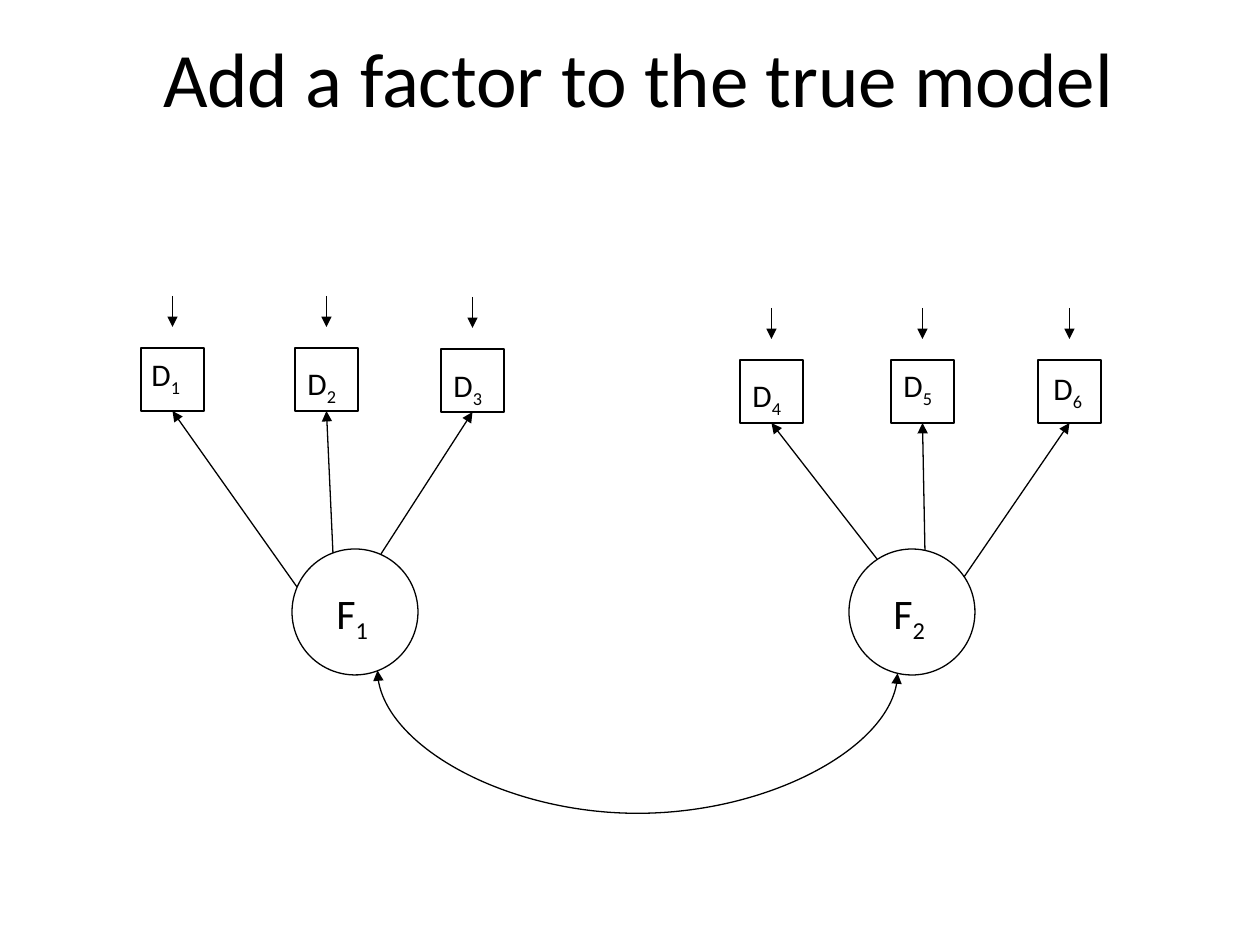
from lxml.etree import SubElement
from pptx import Presentation
from pptx.dml.color import RGBColor
from pptx.enum.shapes import MSO_CONNECTOR, MSO_SHAPE
from pptx.enum.text import MSO_ANCHOR, MSO_AUTO_SIZE, PP_ALIGN
from pptx.oxml.ns import qn
from pptx.util import Emu, Pt

PX = 914400 / 126
COLORS = {"ink": "000000"}
INK = RGBColor.from_string(COLORS["ink"])
BOX, CIRCLE = 63, 126

prs = Presentation()
prs.slide_width, prs.slide_height = Emu(round(1260 * PX)), Emu(round(945 * PX))
slide = prs.slides.add_slide(prs.slide_layouts[6])
shapes = slide.shapes


def add_text(text, x, y, w, h, size, sub="", wrap=False, align=PP_ALIGN.LEFT,
             anchor=MSO_ANCHOR.TOP):
    """Add a text box, with an optional subscript after the text."""
    tf = shapes.add_textbox(*[Emu(round(v * PX)) for v in (x, y, w, h)]).text_frame
    tf.word_wrap = wrap
    tf.auto_size = MSO_AUTO_SIZE.NONE if wrap else MSO_AUTO_SIZE.SHAPE_TO_FIT_TEXT
    tf.vertical_anchor = anchor
    p = tf.paragraphs[0]
    p.alignment = align
    for part in filter(None, (text, sub)):
        r = p.add_run()
        r.text = part
        r.font.name, r.font.size = "Calibri", Pt(size)
        r.font.color.rgb = INK
    if sub:
        r.font._element.set("baseline", "-25000")


def add_arrow(x1, y1, x2, y2, kind=MSO_CONNECTOR.STRAIGHT, ends=("tailEnd",)):
    cxn = shapes.add_connector(kind, *[Emu(round(v * PX)) for v in (x1, y1, x2, y2)])
    cxn.line.color.rgb = INK
    cxn.line.width = Pt(0.75)
    ln = cxn.line._get_or_add_ln()
    for end in ends:
        SubElement(ln, qn(f"a:{end}"), type="triangle")
    SubElement(cxn._element.spPr, qn("a:effectLst"))
    return cxn


# Indicators: box x, y; label x, y; start of the loading arrow on its factor
indicators = [
    (141, 348, 139, 349, 297, 587),
    (295, 348, 295, 358, 333, 553),
    (441, 349, 441, 360, 381, 554),
    (740, 360, 740, 370, 877, 559),
    (891, 360, 891, 360, 925, 551),
    (1038, 360, 1041, 363, 964, 577),
]
# Factors: circle x, rotation
factors = [(292, 23.7), (849, 326.9)]
FACTOR_Y = 549

outlines = [(MSO_SHAPE.OVAL, x, FACTOR_Y, CIRCLE, turn) for x, turn in factors]
outlines += [(MSO_SHAPE.RECTANGLE, x, y, BOX, 0) for x, y, *_ in indicators]
for kind, x, y, side, turn in outlines:
    sp = shapes.add_shape(kind, *[Emu(round(v * PX)) for v in (x, y, side, side)])
    sp.rotation = turn
    sp.shadow.inherit = False
    sp.fill.background()
    sp.line.color.rgb = INK
    sp.line.width = Pt(0.75)

for i, (x, y, label_x, label_y, from_x, from_y) in enumerate(indicators, 1):
    mid = x + BOX / 2
    add_arrow(from_x, from_y, mid, y + BOX)
    add_arrow(mid, y - 52, mid, y - 21)
    add_text("D", label_x, label_y, 55, 50, 18, sub=str(i))

for i, (x, _) in enumerate(factors, 1):
    add_text("F", x + 32, FACTOR_Y + 32, 67, 63, 24, sub=str(i))

# Factor correlation: a thin curved connector turned on its side, bowing down
curve = add_arrow(639, 412, 636, 932, MSO_CONNECTOR.CURVE, ("headEnd", "tailEnd"))
sp_pr = curve._element.spPr
sp_pr.find(qn("a:xfrm")).set("rot", str(270 * 60000))
guides = sp_pr.find(qn("a:prstGeom")).find(qn("a:avLst"))
SubElement(guides, qn("a:gd"), name="adj1", fmla="val 4800000")

add_text("Add a factor to the true model", 72, 20, 1134, 113, 44, wrap=True,
         align=PP_ALIGN.CENTER, anchor=MSO_ANCHOR.MIDDLE)

prs.save("out.pptx")
